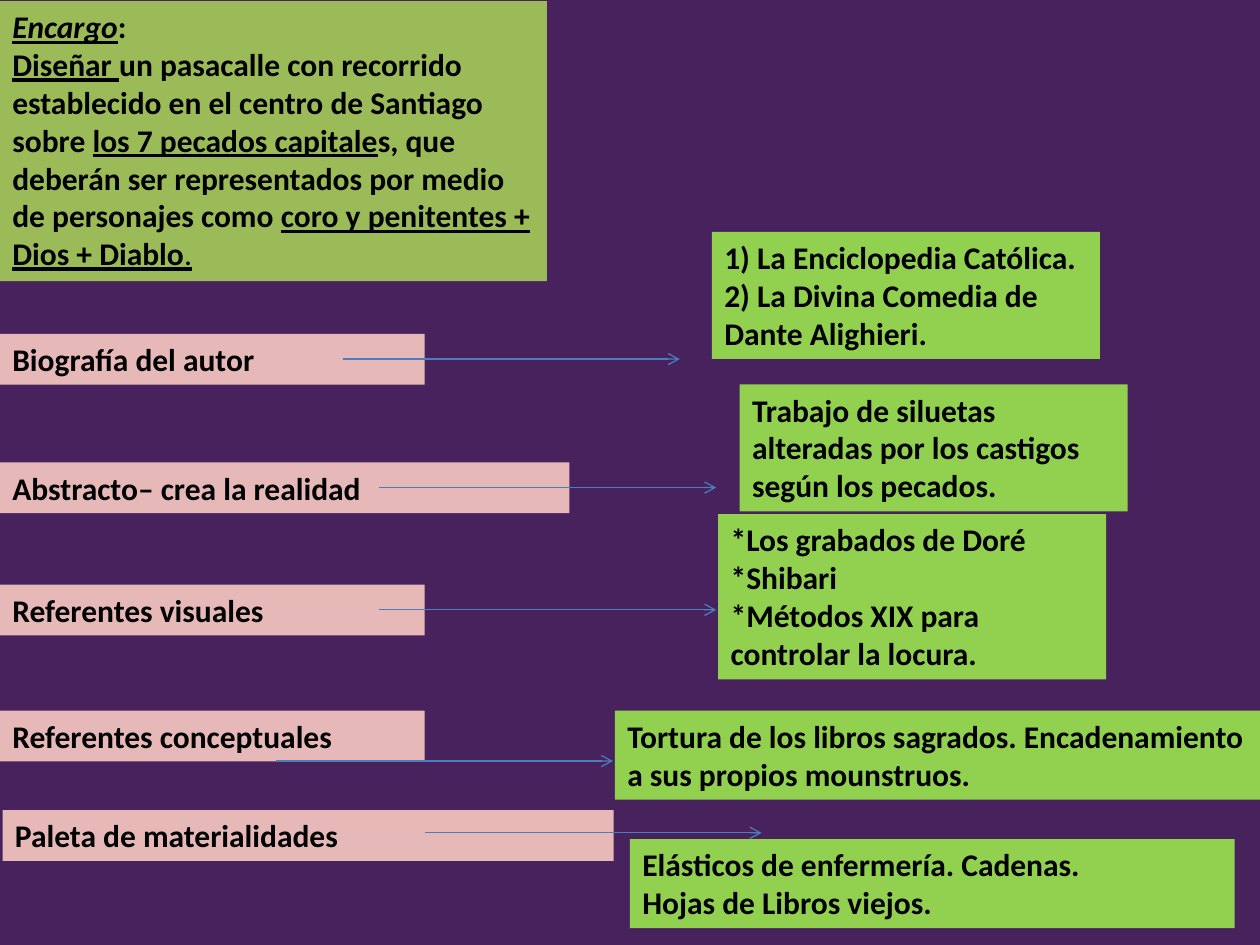
from dataclasses import dataclass

import pptx
import pptx.dml.color
import pptx.enum.shapes
import pptx.enum.text
import pptx.oxml.ns
import pptx.util
from lxml import etree

COLORS = {
    "background": "47225C",
    "brief": "9BBB59",
    "topic": "E6B9B8",
    "answer": "92D050",
    "arrow": "4B7EBC",
    "text": "000000",
}
COLUMNS, ROWS = 100, 75
ARROW_SPAN = 26.75  # columns
PADDING_ROWS, LINE_ROWS = 1, 3.03
TOPIC_LINES = 1


@dataclass
class Topic:
    """A pink label and the arrow that leaves it, in columns and rows."""
    text: str
    left: float
    top: float
    width: float
    arrow_left: float
    arrow_drop: float = 2


@dataclass
class Answer:
    """A green box; its height follows from its number of lines."""
    paragraphs: list[str]
    left: float
    top: float
    width: float
    lines: int


BRIEF = [
    [("Encargo", dict(italic=True, underline=True)), (":", {})],
    [
        ("Diseñar ", dict(underline=True)),
        ("un pasacalle con recorrido establecido en el centro de Santiago sobre ", {}),
        ("los 7 pecados capitale", dict(underline=True)),
        ("s, que deberán ser representados por medio de personajes como ", {}),
        ("coro y penitentes + Dios + Diablo", dict(underline=True)),
        (".", dict(underline=True, bold=False)),
    ],
]
TOPICS = [
    Topic("Biografía del autor", 0, 26.5, 33.7, 27.2),
    Topic("Abstracto– crea la realidad", 0, 36.7, 45.2, 30.1),
    Topic("Referentes visuales", 0, 46.4, 33.7, 30.1),
    Topic("Referentes conceptuales", 0, 56.4, 33.7, 21.9, 4),
    Topic("Paleta de materialidades", 0.2, 64.3, 48.5, 33.7, 1.8),
]
ANSWERS = [
    Answer(["1) La Enciclopedia Católica.",
            "2) La Divina Comedia de Dante Alighieri."], 56.5, 18.4, 30.8, 3),
    Answer(["Trabajo de siluetas alteradas por los castigos según los pecados."],
           58.7, 30.5, 30.8, 3),
    Answer(["*Los grabados de Doré", "*Shibari",
            "*Métodos XIX para controlar la locura."], 57, 40.8, 30.8, 4),
    Answer(["Tortura de los libros sagrados. Encadenamiento a sus propios mounstruos."],
           48.8, 56.4, 51.2, 2),
    Answer(["Elásticos de enfermería. Cadenas.", "Hojas de Libros viejos."],
           50, 66.6, 48, 2),
]

deck = pptx.Presentation()
deck.slide_width = pptx.util.Inches(10)
deck.slide_height = pptx.util.Inches(7.5)


def col(count: float) -> int:
    return round(deck.slide_width * count / COLUMNS)


def row(count: float) -> int:
    return round(deck.slide_height * count / ROWS)


def color(name: str) -> pptx.dml.color.RGBColor:
    return pptx.dml.color.RGBColor.from_string(COLORS[name])


def write(paragraph, text: str, *, bold=True, italic=False, underline=False) -> None:
    run = paragraph.add_run()
    run.text = text
    run.font.name = "Calibri"
    run.font.size = pptx.util.Pt(18)
    run.font.color.rgb = color("text")
    run.font.bold = bold
    run.font.italic = italic
    run.font.underline = underline


def draw_box(slide, paragraphs: list, fill: str, left: float, top: float,
             width: float, lines: int) -> None:
    """Draw a filled text box; each paragraph is a list of (text, format) pairs."""
    height = PADDING_ROWS + LINE_ROWS * lines
    box = slide.shapes.add_textbox(col(left), row(top), col(width), row(height))
    box.fill.solid()
    box.fill.fore_color.rgb = color(fill)
    frame = box.text_frame
    frame.word_wrap = True
    frame.auto_size = pptx.enum.text.MSO_AUTO_SIZE.SHAPE_TO_FIT_TEXT
    for index, pieces in enumerate(paragraphs):
        paragraph = frame.add_paragraph() if index else frame.paragraphs[0]
        for text, style in pieces:
            write(paragraph, text, **style)


def draw_arrow(slide, left: float, top: float) -> None:
    arrow = slide.shapes.add_connector(
        pptx.enum.shapes.MSO_CONNECTOR.STRAIGHT,
        col(left), row(top), col(left + ARROW_SPAN), row(top))
    arrow.line.color.rgb = color("arrow")
    arrow.line.width = pptx.util.Pt(0.75)
    qn = pptx.oxml.ns.qn
    etree.SubElement(arrow.line._get_or_add_ln(), qn("a:tailEnd"), type="arrow")
    etree.SubElement(arrow._element.spPr, qn("a:effectLst"))


def draw_topic(slide, topic: Topic) -> None:
    draw_box(slide, [[(topic.text, {})]], "topic",
             topic.left, topic.top, topic.width, TOPIC_LINES)


def draw_answer(slide, answer: Answer) -> None:
    draw_box(slide, [[(text, {})] for text in answer.paragraphs], "answer",
             answer.left, answer.top, answer.width, answer.lines)


def main() -> None:
    slide = deck.slides.add_slide(deck.slide_layouts.get_by_name("Blank"))
    slide.background.fill.solid()
    slide.background.fill.fore_color.rgb = color("background")

    # Assignment
    draw_box(slide, BRIEF, "brief", 0, 0.1, 43.4, 7)

    # Topics, then the arrows that lead to the answers
    for topic in TOPICS:
        draw_topic(slide, topic)
    for topic in TOPICS:
        draw_arrow(slide, topic.arrow_left, topic.top + topic.arrow_drop)

    # Answers
    for answer in ANSWERS:
        draw_answer(slide, answer)

    deck.save("out.pptx")


if __name__ == "__main__":
    main()
